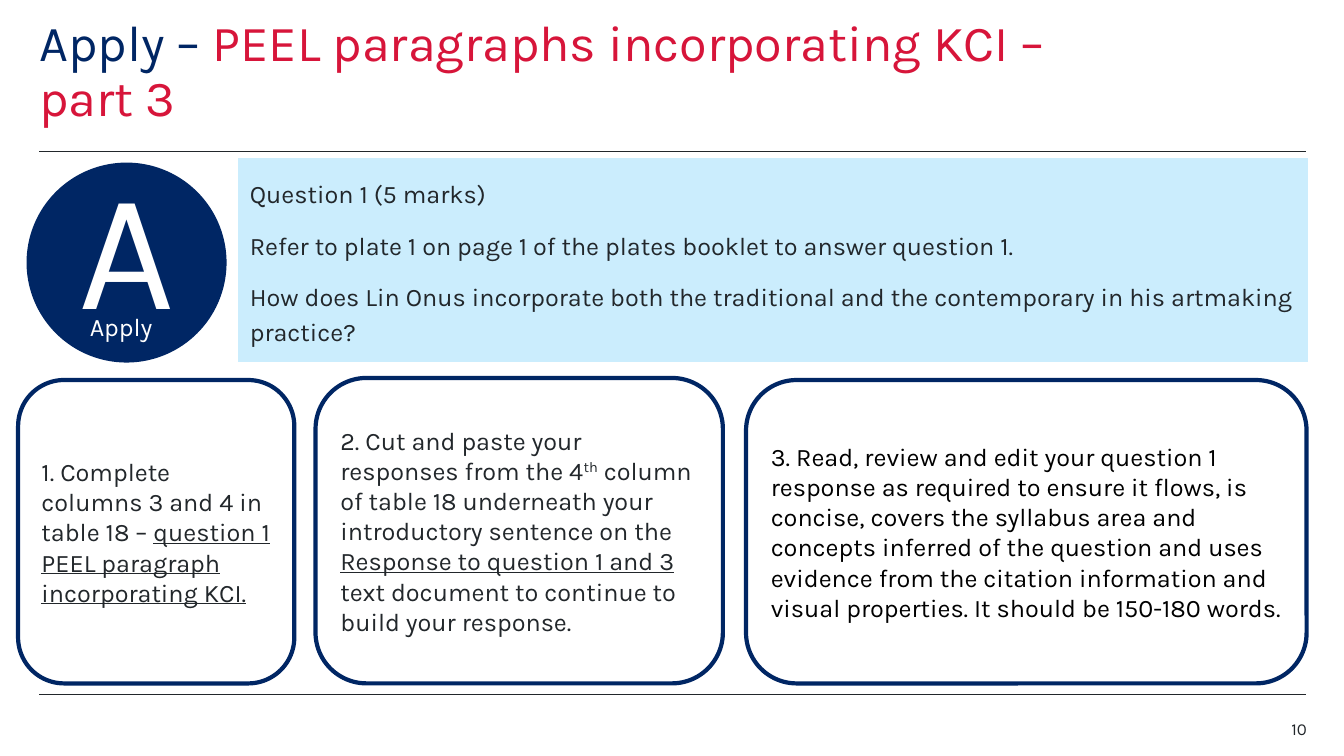
from dataclasses import dataclass
from typing import NamedTuple

from lxml import etree
from pptx import Presentation
from pptx.dml.color import RGBColor
from pptx.enum.shapes import MSO_CONNECTOR, MSO_SHAPE
from pptx.enum.text import MSO_ANCHOR, MSO_AUTO_SIZE, PP_ALIGN
from pptx.oxml.ns import qn
from pptx.util import Emu, Inches, Pt

RECT, ROUND, OVAL = MSO_SHAPE.RECTANGLE, MSO_SHAPE.ROUNDED_RECTANGLE, MSO_SHAPE.OVAL
LEFT, CENTER, RIGHT = PP_ALIGN.LEFT, PP_ALIGN.CENTER, PP_ALIGN.RIGHT
TOP, MIDDLE = MSO_ANCHOR.TOP, MSO_ANCHOR.MIDDLE
STRAIGHT = MSO_CONNECTOR.STRAIGHT
SLIDE_W, SLIDE_H = Inches(13.33), Inches(7.5)


@dataclass(frozen=True)
class Theme:
    font: str = "Karla"
    navy: str = "002664"
    red: str = "D7153A"
    sky: str = "CBEDFD"
    ink: str = "22272B"
    black: str = "000000"
    white: str = "FFFFFF"
    title: int = 36
    body: int = 18
    letter: int = 120
    number: int = 12


T = Theme()


class Box(NamedTuple):
    """Left, top, width and height as percentages of the slide."""
    x: float
    y: float
    w: float
    h: float

    def emu(self) -> tuple:
        return across(self.x), down(self.y), across(self.w), down(self.h)


class Run(NamedTuple):
    text: str
    color: str = T.ink
    size: int = T.body
    underline: bool = False
    superscript: bool = False


@dataclass(frozen=True)
class Panel:
    kind: int
    box: Box
    fill: str
    line: str
    weight: float
    paragraphs: tuple = ()
    spacing: float = 1.0
    before: float = 0


@dataclass(frozen=True)
class Label:
    box: Box
    run: Run
    align: int = LEFT


def across(pct: float) -> Emu:
    return Emu(round(SLIDE_W * pct / 100))


def down(pct: float) -> Emu:
    return Emu(round(SLIDE_H * pct / 100))


def rgb(color: str) -> RGBColor:
    return RGBColor.from_string(color)


def add_run(p, run: Run) -> None:
    r = p.add_run()
    r.text = run.text
    r.font.name = T.font
    r.font.size = Pt(run.size)
    r.font.color.rgb = rgb(run.color)
    if run.underline:
        r.font.underline = True
    if run.superscript:
        r.font._element.set("baseline", "30000")


def write(tf, paragraphs: tuple, align: int = LEFT, spacing: float = 1.0, before: float = 0) -> None:
    tf.word_wrap = True
    for i, runs in enumerate(paragraphs):
        p = tf.add_paragraph() if i else tf.paragraphs[0]
        p.alignment = align
        p.line_spacing = spacing
        p.space_before = Pt(before if i else 0)
        for run in runs:
            add_run(p, run)


def clear_margins(tf) -> None:
    tf.margin_left = tf.margin_top = tf.margin_right = tf.margin_bottom = 0


def add_title(s, box: Box, runs: tuple) -> None:
    sp = s.shapes.title
    sp.left, sp.top, sp.width, sp.height = box.emu()
    tf = sp.text_frame
    tf.auto_size = MSO_AUTO_SIZE.NONE
    tf.vertical_anchor = TOP
    clear_margins(tf)
    write(tf, (runs,), spacing=0.9)


def add_rule(s, y: float) -> None:
    line = s.shapes.add_connector(STRAIGHT, across(2.93), down(y), across(97.15), down(y))
    line.line.color.rgb = rgb(T.ink)
    line.line.width = Pt(0.5)
    etree.SubElement(line._element.spPr, qn("a:effectLst"))


def add_panel(s, panel: Panel) -> None:
    sp = s.shapes.add_shape(panel.kind, *panel.box.emu())
    sp.shadow.inherit = False
    sp.fill.solid()
    sp.fill.fore_color.rgb = rgb(panel.fill)
    sp.line.color.rgb = rgb(panel.line)
    sp.line.width = Pt(panel.weight)
    etree.SubElement(sp._element.spPr.find(qn("a:ln")), qn("a:miter"), lim="800000")
    sp.text_frame.vertical_anchor = MIDDLE
    write(sp.text_frame, panel.paragraphs, spacing=panel.spacing, before=panel.before)


def add_label(s, label: Label) -> None:
    tf = s.shapes.add_textbox(*label.box.emu()).text_frame
    clear_margins(tf)
    write(tf, ((label.run,),), label.align)


def card(box: Box, *runs: Run) -> Panel:
    return Panel(ROUND, box, T.white, T.navy, 3, (runs,))


TITLE = (
    Run("Apply – ", T.navy, T.title),
    Run("PEEL paragraphs incorporating KCI – part 3", T.red, T.title),
)
QUESTION = (
    (Run("Question 1 (5 marks)"),),
    (Run("Refer to plate 1 on page 1 of the plates booklet to answer question 1."),),
    (Run("How does Lin Onus incorporate both the traditional and the contemporary "
         "in his artmaking practice?"),),
)
PANELS = (
    Panel(OVAL, Box(2.03, 21.6, 14.78, 26.27), T.navy, T.navy, 1),
    Panel(RECT, Box(17.85, 21.2, 79.29, 26.4), T.sky, T.sky, 3, QUESTION, 1.15, 12),
    card(Box(1.35, 50.27, 20.55, 40.13),
         Run("1. Complete columns 3 and 4 in table 18 – "),
         Run("question 1 PEEL paragraph incorporating KCI.", underline=True)),
    card(Box(23.48, 50, 30.31, 40.4),
         Run("2. Cut and paste your responses from the 4"),
         Run("th", superscript=True),
         Run(" column of table 18 underneath your introductory sentence on the "),
         Run("Response to question 1 and 3 ", underline=True),
         Run("text document to continue to build your response.")),
    card(Box(55.51, 50.27, 41.71, 40.13),
         Run("3. Read, review and edit your question 1 response as required to ensure it "
             "flows, is concise, covers the syllabus area and concepts inferred of the "
             "question and uses evidence from the citation information and visual "
             "properties. It should be 150-180 words.", T.black)),
)
LABELS = (
    Label(Box(2.03, 18.68, 14.78, 26), Run("A", T.white, T.letter), CENTER),
    Label(Box(6.68, 41.2, 5.48, 6.4), Run("Apply", T.white)),
    Label(Box(91.3, 95.07, 5.93, 2.67), Run("10", size=T.number), RIGHT),
)


def main() -> None:
    prs = Presentation()
    prs.slide_width, prs.slide_height = SLIDE_W, SLIDE_H
    s = prs.slides.add_slide(prs.slide_layouts.get_by_name("Title Only"))
    add_title(s, Box(2.93, 2.4, 82.67, 14.67), TITLE)
    for y in (20, 91.87):
        add_rule(s, y)
    for panel in PANELS:
        add_panel(s, panel)
    for label in LABELS:
        add_label(s, label)
    prs.save("out.pptx")


if __name__ == "__main__":
    main()
